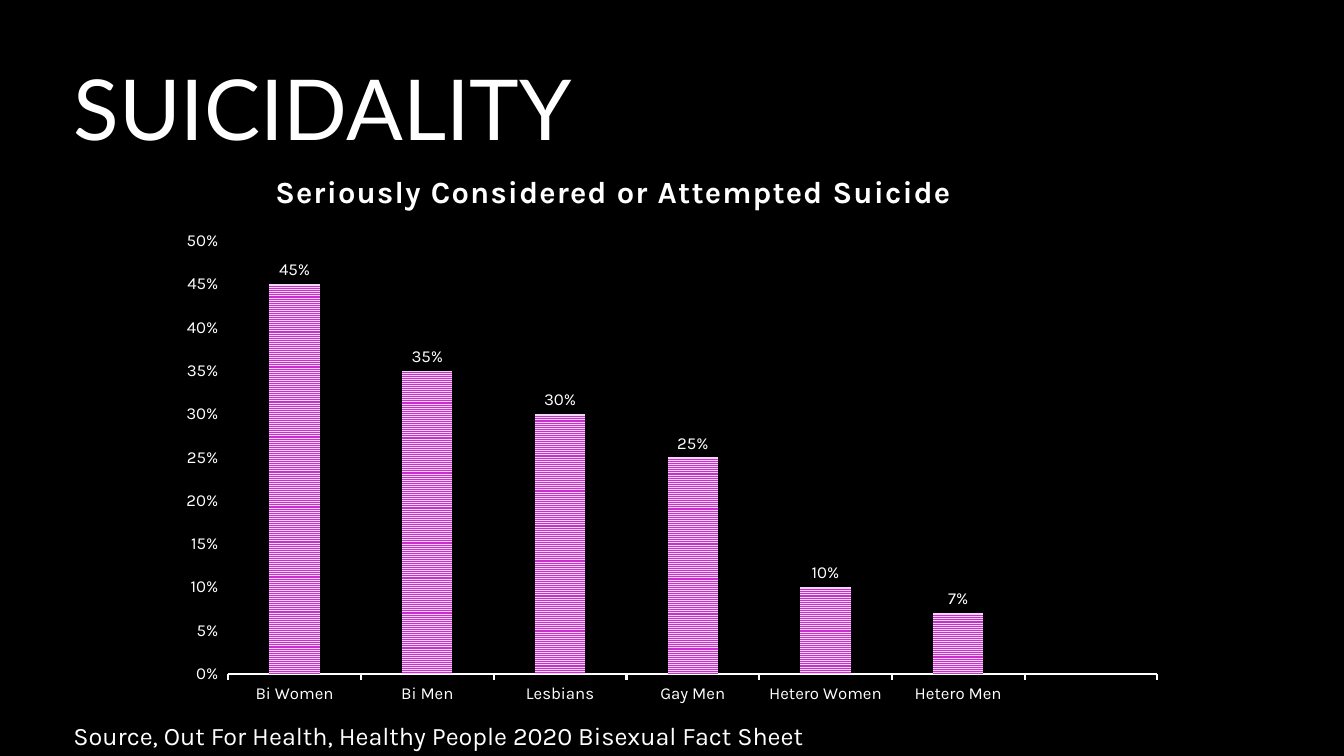
from lxml import etree
from pptx import Presentation
from pptx.chart.data import CategoryChartData
from pptx.dml.color import RGBColor
from pptx.enum import chart as ch, dml, text
from pptx.oxml import ns
from pptx.util import Pt

BLACK = RGBColor(0, 0, 0)
WHITE = RGBColor(255, 255, 255)
PINK = RGBColor(0xC8, 0x30, 0xCC)
PALE = RGBColor(0xF4, 0xD5, 0xF5)

RATES = [("Bi Women", 0.45), ("Bi Men", 0.35), ("Lesbians", 0.3),
         ("Gay Men", 0.25), ("Hetero Women", 0.1), ("Hetero Men", 0.07),
         ("", None)]


def style(font, size, name="Karla", bold=False):
    font.size = Pt(size)
    font.name = name
    font.bold = bold
    font.color.rgb = WHITE


def add_text(slide, box, words, size, name="Karla"):
    frame = slide.shapes.add_textbox(*map(Pt, box)).text_frame
    frame.word_wrap = True
    frame.text = words
    style(frame.paragraphs[0].runs[0].font, size, name)
    return frame


def place(parent, **spots):
    """Give a chart part a fixed spot, in fractions of the chart."""
    for old in parent.findall(ns.qn("c:layout")):
        parent.remove(old)
    layout = etree.Element(ns.qn("c:layout"))
    manual = etree.SubElement(layout, ns.qn("c:manualLayout"))
    for tag, val in spots.items():
        etree.SubElement(manual, ns.qn("c:" + tag)).set("val", str(val))
    return layout


def add_title(chart, words):
    chart.has_title = True
    title = chart.chart_title
    title.include_in_layout = False
    title.text_frame.text = words
    run = title.text_frame.paragraphs[0].runs[0]
    style(run.font, 22, bold=True)
    run.font._element.set("spc", "100")
    node = title._element
    spot = place(node, xMode="edge", yMode="edge", x=0.13, y=0.05)
    node.find(ns.qn("c:tx")).addnext(spot)


def style_axes(chart):
    cat, val = chart.category_axis, chart.value_axis
    for axis in (cat, val):
        axis.has_major_gridlines = False
        axis.major_tick_mark = ch.XL_TICK_MARK.OUTSIDE
        style(axis.tick_labels.font, 12)
    cat.format.line.color.rgb = WHITE
    cat.format.line.width = Pt(1.5)
    val.format.line.fill.background()
    val.minimum_scale, val.maximum_scale = 0, 0.5
    val.major_unit = 0.05
    val.tick_labels.number_format = "0%"
    val.tick_labels.number_format_is_linked = False


def style_bars(plot):
    plot.gap_width, plot.overlap = 164, -22
    plot.vary_by_categories = False
    fill = plot.series[0].format.fill
    fill.patterned()
    fill.pattern = dml.MSO_PATTERN.NARROW_HORIZONTAL
    fill.fore_color.rgb = PINK
    fill.back_color.rgb = PALE
    labels = plot.series[0].data_labels
    labels.show_value = True
    labels.position = ch.XL_LABEL_POSITION.OUTSIDE_END
    labels.number_format = "0%"
    labels.number_format_is_linked = False
    style(labels.font, 12)


def add_bars(slide, box):
    data = CategoryChartData(number_format="0%")
    data.categories = [group for group, rate in RATES]
    data.add_series("Series 1", [rate for group, rate in RATES])
    kind = ch.XL_CHART_TYPE.COLUMN_CLUSTERED
    chart = slide.shapes.add_chart(kind, *map(Pt, box), data).chart
    style(chart.font, 10)
    chart.has_legend = False
    add_title(chart, "Seriously Considered or Attempted Suicide")
    style_axes(chart)
    style_bars(chart.plots[0])
    area = chart._chartSpace.chart.plotArea
    area.insert(0, place(area, layoutTarget="inner", xMode="edge",
                         yMode="edge", x=0.092, y=0.174, w=0.852, h=0.712))


def main():
    deck = Presentation()
    deck.slide_width, deck.slide_height = Pt(960), Pt(540)
    slide = deck.slides.add_slide(deck.slide_layouts[6])
    slide.background.fill.solid()
    slide.background.fill.fore_color.rgb = BLACK
    head = add_text(slide, (45.4, 13, 865.4, 127.4), "SUICIDALITY", 60, "Lato")
    head.vertical_anchor = text.MSO_ANCHOR.MIDDLE
    head.paragraphs[0].space_after = Pt(12)
    add_bars(slide, (91.4, 96.5, 779, 434.2))
    add_text(slide, (45.4, 511.2, 570.2, 28.8),
             "Source, Out For Health, Healthy People 2020 Bisexual Fact Sheet",
             18)
    deck.save("out.pptx")


if __name__ == "__main__":
    main()
